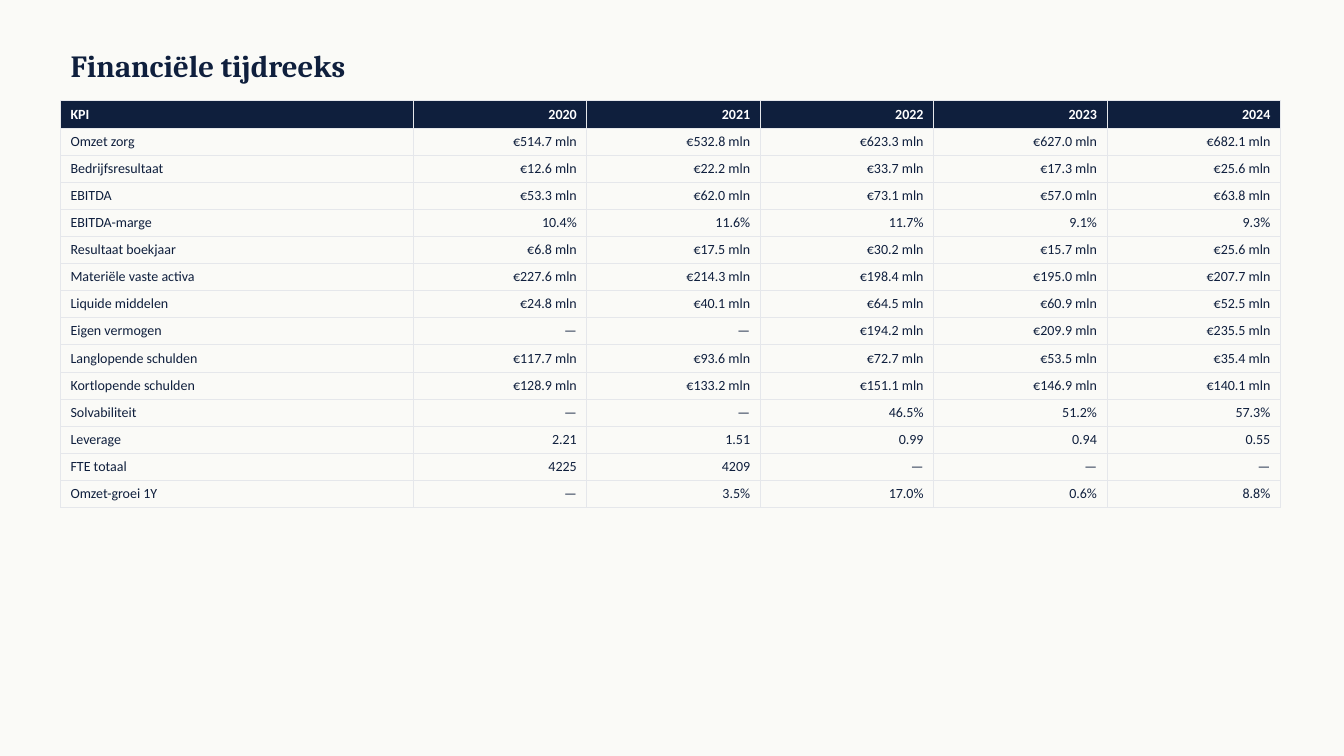
from lxml import etree
from pptx import Presentation
from pptx.dml.color import RGBColor
from pptx.enum.text import MSO_ANCHOR, MSO_AUTO_SIZE, PP_ALIGN
from pptx.oxml.ns import qn
from pptx.util import Pt

LEFT, RIGHT = PP_ALIGN.LEFT, PP_ALIGN.RIGHT
MIDDLE = MSO_ANCHOR.MIDDLE
NO_AUTOFIT = MSO_AUTO_SIZE.NONE
TITLE_ONLY = 5
PX = 9144

COLORS = {
    "paper": "FAFAF7",
    "navy": "0F1F3D",
    "white": "FFFFFF",
    "rule": "E5E7EB",
}

KPIS = [
    ["KPI", "2020", "2021", "2022", "2023", "2024"],
    ["Omzet zorg", "€514.7 mln", "€532.8 mln", "€623.3 mln", "€627.0 mln", "€682.1 mln"],
    ["Bedrijfsresultaat", "€12.6 mln", "€22.2 mln", "€33.7 mln", "€17.3 mln", "€25.6 mln"],
    ["EBITDA", "€53.3 mln", "€62.0 mln", "€73.1 mln", "€57.0 mln", "€63.8 mln"],
    ["EBITDA-marge", "10.4%", "11.6%", "11.7%", "9.1%", "9.3%"],
    ["Resultaat boekjaar", "€6.8 mln", "€17.5 mln", "€30.2 mln", "€15.7 mln", "€25.6 mln"],
    ["Materiële vaste activa", "€227.6 mln", "€214.3 mln", "€198.4 mln", "€195.0 mln", "€207.7 mln"],
    ["Liquide middelen", "€24.8 mln", "€40.1 mln", "€64.5 mln", "€60.9 mln", "€52.5 mln"],
    ["Eigen vermogen", "—", "—", "€194.2 mln", "€209.9 mln", "€235.5 mln"],
    ["Langlopende schulden", "€117.7 mln", "€93.6 mln", "€72.7 mln", "€53.5 mln", "€35.4 mln"],
    ["Kortlopende schulden", "€128.9 mln", "€133.2 mln", "€151.1 mln", "€146.9 mln", "€140.1 mln"],
    ["Solvabiliteit", "—", "—", "46.5%", "51.2%", "57.3%"],
    ["Leverage", "2.21", "1.51", "0.99", "0.94", "0.55"],
    ["FTE totaal", "4225", "4209", "—", "—", "—"],
    ["Omzet-groei 1Y", "—", "3.5%", "17.0%", "0.6%", "8.8%"],
]


class Deck:
    """Holds the style and the current slide, and draws elements on it."""

    heading_font = "Cambria"
    body_font = "Calibri"

    def __init__(self, width, height):
        self.prs = Presentation()
        self.prs.slide_width, self.prs.slide_height = width * PX, height * PX

    def color(self, name):
        return RGBColor.from_string(COLORS[name])

    def add_slide(self):
        self.s = self.prs.slides.add_slide(self.prs.slide_layouts[TITLE_ONLY])
        fill = self.s.background.fill
        fill.solid()
        fill.fore_color.rgb = self.color("paper")

    def style(self, p, font, size, color, bold, align):
        p.alignment = align
        p.font.name, p.font.size, p.font.bold = font, Pt(size), bold
        p.font.color.rgb = self.color(color)

    def title(self, text, x, y, w, h):
        sp = self.s.shapes.title
        sp.left, sp.top, sp.width, sp.height = (v * PX for v in (x, y, w, h))
        tf = sp.text_frame
        tf.text = text
        tf.auto_size, tf.vertical_anchor = NO_AUTOFIT, MIDDLE
        self.style(tf.paragraphs[0], self.heading_font, 22, "navy", True, LEFT)

    def borders(self, cell):
        tcPr = cell._tc.get_or_add_tcPr()
        for side in ("a:lnL", "a:lnR", "a:lnT", "a:lnB"):
            ln = etree.SubElement(tcPr, qn(side), w=str(Pt(0.5)))
            fill = etree.SubElement(ln, qn("a:solidFill"))
            etree.SubElement(fill, qn("a:srgbClr"), val=COLORS["rule"])

    def table(self, rows, x, y, widths, row_height):
        box = (x, y, sum(widths), row_height * len(rows))
        frame = self.s.shapes.add_table(len(rows), len(widths), *(v * PX for v in box))
        tbl = frame.table
        tbl.horz_banding = False
        for column, width in zip(tbl.columns, widths):
            column.width = width * PX
        for i, row in enumerate(rows):
            tbl.rows[i].height = row_height * PX
            for j, text in enumerate(row):
                self.cell(tbl.cell(i, j), text, i == 0, RIGHT if j else LEFT)

    def cell(self, cell, text, header, align):
        cell.text = text
        self.borders(cell)
        if header:
            cell.fill.solid()
            cell.fill.fore_color.rgb = self.color("navy")
        else:
            cell.fill.background()
        color = "white" if header else "navy"
        self.style(cell.text_frame.paragraphs[0], self.body_font, 10, color, header, align)


def main():
    deck = Deck(1333, 750)
    deck.add_slide()
    deck.title("Financiële tijdreeks", 60, 40, 1200, 50)
    deck.table(KPIS, 60, 100, [350] + [172] * 5, 26)
    deck.prs.save("out.pptx")


if __name__ == "__main__":
    main()
